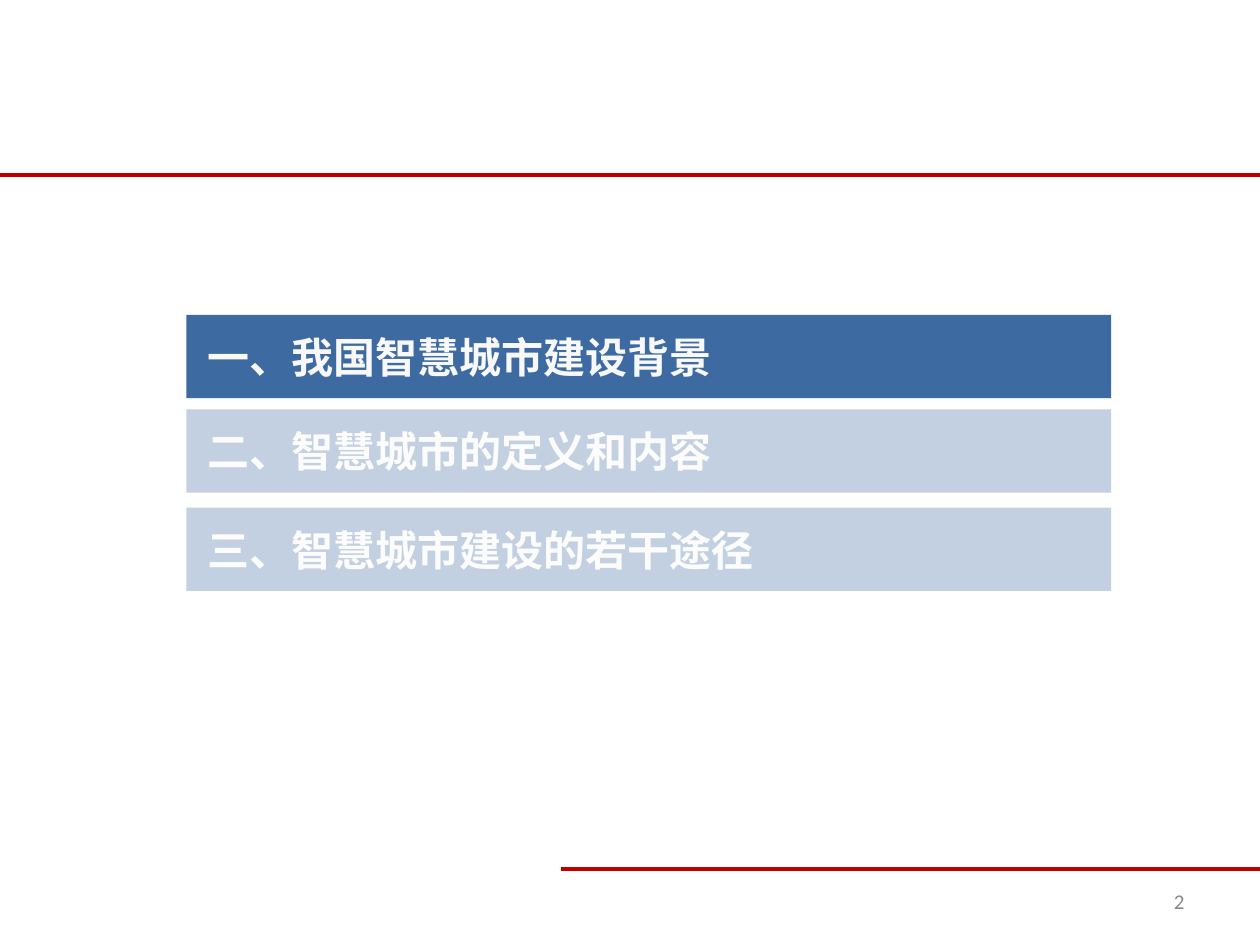
from dataclasses import dataclass

from lxml import etree
from pptx import Presentation
from pptx.dml.color import RGBColor
from pptx.enum.shapes import MSO_CONNECTOR, MSO_SHAPE
from pptx.enum.text import MSO_ANCHOR, PP_ALIGN
from pptx.oxml.ns import qn
from pptx.shapes.autoshape import Shape
from pptx.slide import Slide
from pptx.util import Inches, Pt

STRAIGHT = MSO_CONNECTOR.STRAIGHT
RECTANGLE = MSO_SHAPE.RECTANGLE
MIDDLE = MSO_ANCHOR.MIDDLE
LEFT, RIGHT = PP_ALIGN.LEFT, PP_ALIGN.RIGHT


@dataclass(frozen=True)
class Theme:
    rule: str = "C00000"
    bar: str = "3D6AA1"
    bar_text: str = "F8F8F8"
    veil: str = "FFFFFF"
    page_number: str = "898989"
    heading_font: str = "Noto Sans CJK SC"
    number_font: str = "Calibri"
    heading_size: float = 24
    number_size: float = 12
    rule_width: float = 2.25
    veil_opacity: int = 69


@dataclass(frozen=True)
class Box:
    left: float
    top: float
    width: float
    height: float

    def emu(self) -> tuple[int, int, int, int]:
        return (Inches(self.left), Inches(self.top),
                Inches(self.width), Inches(self.height))


@dataclass(frozen=True)
class Rule:
    left: float
    y: float


@dataclass(frozen=True)
class Chapter:
    title: str
    top: float


THEME = Theme()
SLIDE_WIDTH, SLIDE_HEIGHT = 10, 7.5
BAR_LEFT, BAR_WIDTH, BAR_HEIGHT = 1.48, 7.34, 0.66
BAR_INSET = 0.17
RULES = (Rule(4.45, 6.9), Rule(0, 1.39))
CHAPTERS = (
    Chapter("一、我国智慧城市建设背景", 2.5),
    Chapter("二、智慧城市的定义和内容", 3.25),
    Chapter("三、智慧城市建设的若干途径", 4.03),
)
INACTIVE_AREA = Box(0.86, 3.2, 8.28, 2.11)
PAGE_NUMBER_BOX = Box(7.17, 6.95, 2.33, 0.4)


def write_text(shape: Shape, text: str, *, font: str, size: float, color: str,
               bold: bool = False, align: PP_ALIGN = LEFT,
               inset: float = 0.1) -> None:
    frame = shape.text_frame
    frame.word_wrap = True
    frame.vertical_anchor = MIDDLE
    frame.margin_left = Inches(inset)
    paragraph = frame.paragraphs[0]
    paragraph.alignment = align
    run = paragraph.add_run()
    run.text = text
    run.font.size = Pt(size)
    run.font.bold = bold
    run.font.color.rgb = RGBColor.from_string(color)
    run.font.name = font
    etree.SubElement(run.font._element, qn("a:ea")).set("typeface", font)


def add_rule(slide: Slide, rule: Rule) -> None:
    """Draw a horizontal line from its left end to the slide's right edge."""
    y = Inches(rule.y)
    line = slide.shapes.add_connector(
        STRAIGHT, Inches(rule.left), y, Inches(SLIDE_WIDTH), y)
    line.line.color.rgb = RGBColor.from_string(THEME.rule)
    line.line.width = Pt(THEME.rule_width)
    etree.SubElement(line._element.spPr, qn("a:effectLst"))


def add_rectangle(slide: Slide, box: Box, color: str, opacity: int = 100) -> Shape:
    shape = slide.shapes.add_shape(RECTANGLE, *box.emu())
    shape.shadow.inherit = False
    shape.line.fill.background()
    shape.fill.solid()
    shape.fill.fore_color.rgb = RGBColor.from_string(color)
    if opacity < 100:
        tint = shape._element.spPr.find(f".//{qn('a:srgbClr')}")
        etree.SubElement(tint, qn("a:alpha")).set("val", str(opacity * 1000))
    return shape


def add_chapter(slide: Slide, chapter: Chapter) -> None:
    box = Box(BAR_LEFT, chapter.top, BAR_WIDTH, BAR_HEIGHT)
    bar = add_rectangle(slide, box, THEME.bar)
    write_text(bar, chapter.title, font=THEME.heading_font,
               size=THEME.heading_size, color=THEME.bar_text,
               bold=True, inset=BAR_INSET)


def main() -> None:
    deck = Presentation()
    deck.slide_width = Inches(SLIDE_WIDTH)
    deck.slide_height = Inches(SLIDE_HEIGHT)
    slide = deck.slides.add_slide(deck.slide_layouts[6])

    for rule in RULES:
        add_rule(slide, rule)
    page_number = slide.shapes.add_textbox(*PAGE_NUMBER_BOX.emu())
    write_text(page_number, "2", font=THEME.number_font, size=THEME.number_size,
               color=THEME.page_number, align=RIGHT)
    for chapter in CHAPTERS:
        add_chapter(slide, chapter)
    # The translucent veil dims every chapter but the current one.
    add_rectangle(slide, INACTIVE_AREA, THEME.veil, THEME.veil_opacity)

    deck.save("out.pptx")


if __name__ == "__main__":
    main()
